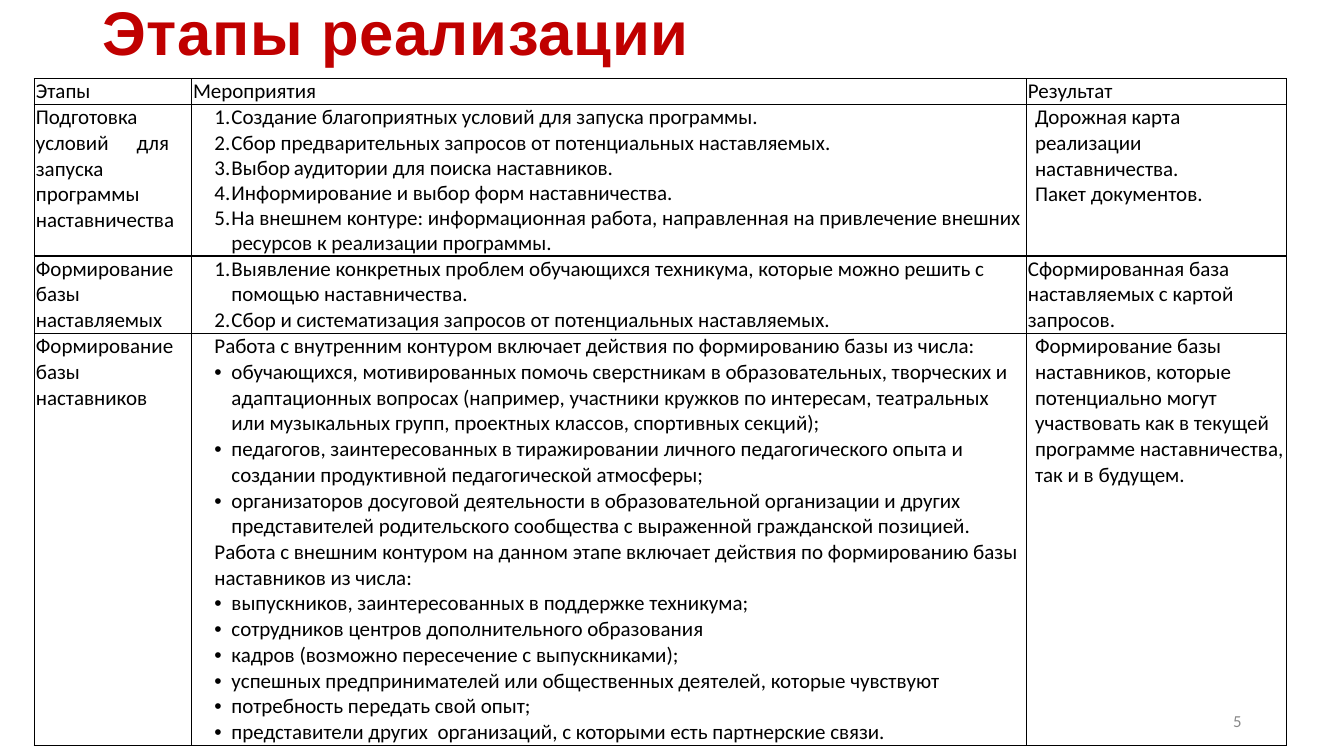
from dataclasses import dataclass
from typing import Optional

from lxml import etree
from pptx import Presentation
from pptx import util as u
from pptx.dml.color import RGBColor
from pptx.enum import text
from pptx.oxml import ns

COLORS = {"title": "C00000", "body": "000000", "page": "888888"}
LEFT, JUSTIFY, RIGHT = (text.PP_ALIGN.LEFT, text.PP_ALIGN.JUSTIFY,
                        text.PP_ALIGN.RIGHT)
INCH = 2.54  # cm

COLUMN_WIDTHS = (3.96, 21.04, 6.55)
ROW_HEIGHTS = (0.66, 3.81, 1.96, 10.37)


@dataclass
class Line:
    words: str
    mark: Optional[str] = None  # "number", a bullet character or nothing
    margin: float = 0
    hanging: float = 0
    align: text.PP_ALIGN = LEFT
    spacing: Optional[float] = None
    tab: float = 0.84


def item(words: str, mark: Optional[str] = "•", align: text.PP_ALIGN = LEFT,
         spacing: Optional[float] = None) -> Line:
    """Line of the activities column, with a hanging indent."""
    return Line(words, mark, 0.97, -0.43, align, spacing, 0.58)


def result(words: str, align: text.PP_ALIGN = LEFT) -> Line:
    return Line(words, margin=0.18, align=align, tab=4.24)


STAGES = [
    [[Line(heading, align=JUSTIFY)]
     for heading in ("Этапы", "Мероприятия", "Результат")],
    [
        [Line("Подготовка условий\tдля запуска программы наставничества")],
        [item(words, "number", spacing=0.98) for words in (
            "Создание благоприятных условий для запуска программы.",
            "Сбор предварительных запросов от потенциальных наставляемых.",
            "Выбор\tаудитории для поиска наставников.",
            "Информирование и выбор форм наставничества.",
            "На внешнем контуре: информационная работа, направленная на "
            "привлечение внешних ресурсов к реализации программы.",
        )],
        [result("Дорожная карта реализации наставничества."),
         result("Пакет документов.", JUSTIFY)],
    ],
    [
        [Line("Формирование базы наставляемых")],
        [item("Выявление конкретных проблем обучающихся техникума, которые "
              "можно решить с помощью наставничества.", "number"),
         item("Сбор и систематизация запросов от потенциальных наставляемых.",
              "number", JUSTIFY)],
        [Line("Сформированная база наставляемых с картой запросов.")],
    ],
    [
        [Line("Формирование базы наставников", align=JUSTIFY)],
        [
            item("Работа с внутренним контуром включает действия по "
                 "формированию базы из числа:", None),
            item("обучающихся, мотивированных помочь сверстникам в "
                 "образовательных, творческих и адаптационных вопросах "
                 "(например, участники кружков по интересам, театральных или "
                 "музыкальных групп, проектных классов, спортивных секций);"),
            item("педагогов, заинтересованных в тиражировании личного "
                 "педагогического опыта и создании продуктивной "
                 "педагогической атмосферы;"),
            item("организаторов досуговой деятельности в образовательной "
                 "организации и других представителей родительского "
                 "сообщества с выраженной гражданской позицией."),
            item("Работа с внешним контуром на данном этапе включает действия "
                 "по формированию базы", None, JUSTIFY),
            item("наставников из числа:", None, JUSTIFY),
            *(item(words, align=JUSTIFY) for words in (
                "выпускников, заинтересованных в поддержке техникума;",
                "сотрудников центров дополнительного образования",
                "кадров (возможно пересечение с выпускниками);",
                "успешных предпринимателей или общественных деятелей, "
                "которые чувствуют",
                "потребность передать свой опыт;",
                "представители других  организаций, с которыми есть "
                "партнерские связи.",
            )),
        ],
        [result("Формирование базы наставников, которые потенциально могут "
                "участвовать как в текущей программе наставничества, так и в "
                "будущем.")],
    ],
]


def add_element(parent, tag: str, **attributes: str):
    element = etree.SubElement(parent, ns.qn(tag))
    for key, value in attributes.items():
        element.set(key, value)
    return element


def set_attributes(target, values: dict) -> None:
    for key, value in values.items():
        setattr(target, key, value)


def add_run(paragraph, words: str, color: str, **font_values):
    run = paragraph.add_run()
    run.text = words
    run.font.color.rgb = RGBColor.from_string(COLORS[color])
    set_attributes(run.font, font_values)
    return run


def write_line(paragraph, line: Line) -> None:
    paragraph.alignment = line.align
    if line.spacing:
        paragraph.line_spacing = line.spacing
    properties = paragraph._p.get_or_add_pPr()
    properties.set("marL", str(u.Cm(line.margin)))
    properties.set("indent", str(u.Cm(line.hanging)))
    if line.mark:
        bullet_color = add_element(properties, "a:buClr")
        add_element(bullet_color, "a:srgbClr", val=COLORS["body"])
        if line.mark == "number":
            add_element(properties, "a:buAutoNum", type="arabicPeriod")
        else:
            add_element(properties, "a:buFont", typeface="Arial")
            add_element(properties, "a:buChar", char=line.mark)
    else:
        add_element(properties, "a:buNone")
    tabs = add_element(properties, "a:tabLst")
    add_element(tabs, "a:tab", pos=str(u.Cm(line.tab)), algn="l")
    add_run(paragraph, line.words, "body", name="Calibri", size=u.Pt(15))


def add_borders(cell) -> None:
    properties = cell._tc.get_or_add_tcPr()
    for side in ("a:lnL", "a:lnR", "a:lnT", "a:lnB"):
        border = add_element(properties, side, w=str(u.Pt(1)))
        fill = add_element(border, "a:solidFill")
        add_element(fill, "a:srgbClr", val=COLORS["body"])


def fill_cell(cell, lines: list[Line]) -> None:
    set_attributes(cell, {
        "margin_left": u.Cm(0.04), "margin_right": u.Cm(0.04),
        "margin_top": 0, "margin_bottom": 0,
    })
    add_borders(cell)
    cell.fill.background()
    frame = cell.text_frame
    for index, line in enumerate(lines):
        write_line(frame.add_paragraph() if index else frame.paragraphs[0], line)


def add_stages_table(slide) -> None:
    table = slide.shapes.add_table(
        len(ROW_HEIGHTS), len(COLUMN_WIDTHS), u.Cm(0.34 * INCH),
        u.Cm(0.78 * INCH), u.Cm(sum(COLUMN_WIDTHS)),
        u.Cm(sum(ROW_HEIGHTS))).table
    set_attributes(table, {"first_row": False, "horz_banding": False})
    for column, width in zip(table.columns, COLUMN_WIDTHS):
        column.width = u.Cm(width)
    for row, height, stage in zip(table.rows, ROW_HEIGHTS, STAGES):
        row.height = u.Cm(height)
        for cell, lines in zip(row.cells, stage):
            fill_cell(cell, lines)


def add_text_line(slide, left: float, top: float, width: float, height: float):
    """Text box with one centred-by-height paragraph, which is returned."""
    box = slide.shapes.add_textbox(*map(u.Cm, (left, top, width, height)))
    set_attributes(box.text_frame, {
        "word_wrap": True, "vertical_anchor": text.MSO_ANCHOR.MIDDLE})
    return box.text_frame.paragraphs[0]


def main() -> None:
    deck = Presentation()
    deck.slide_width, deck.slide_height = u.Cm(33.87), u.Cm(19.05)
    slide = deck.slides.add_slide(deck.slide_layouts[6])

    page_number = add_text_line(slide, 23.92, 17.66, 7.62, 1.01)
    page_number.alignment = RIGHT
    add_run(page_number, "5", "page", name="Calibri", size=u.Pt(12))

    title = add_text_line(slide, 2.33, 0, 29.21, 1.8)
    title.line_spacing = 0.9
    title_run = add_run(title, "Этапы реализации", "title", name="Arial",
                        size=u.Pt(44), bold=True)
    title_run.font._element.set("spc", "50")

    add_stages_table(slide)
    deck.save("out.pptx")


if __name__ == "__main__":
    main()
